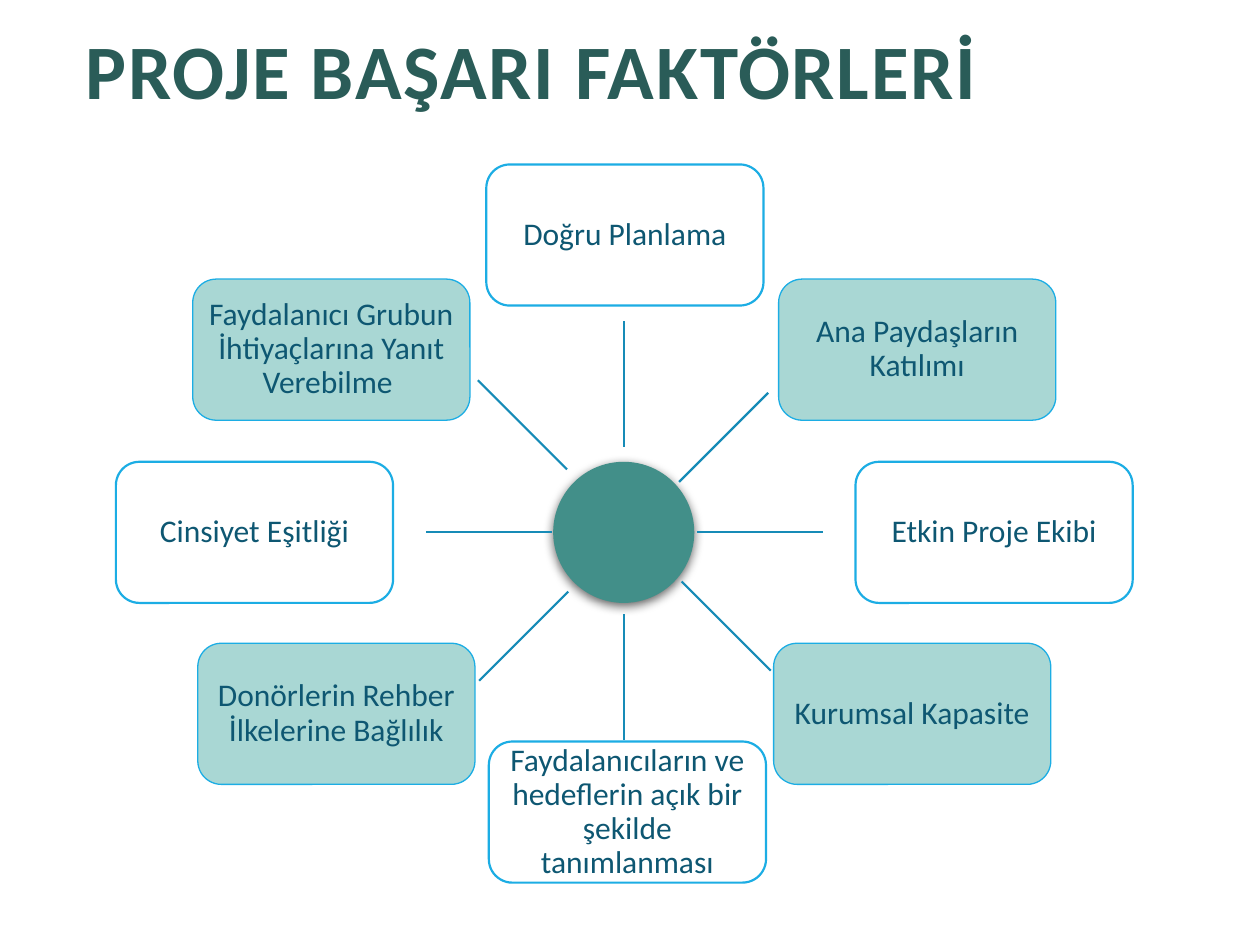
from math import cos, pi, sin

from lxml import etree
from pptx import Presentation
from pptx.dml.color import RGBColor
from pptx.enum.shapes import MSO_CONNECTOR, MSO_SHAPE
from pptx.enum.text import MSO_ANCHOR, PP_ALIGN
from pptx.oxml import parse_xml
from pptx.oxml.ns import qn
from pptx.util import Inches, Pt

MID, CENTER, LEFT = MSO_ANCHOR.MIDDLE, PP_ALIGN.CENTER, PP_ALIGN.LEFT
ROUND, OVAL = MSO_SHAPE.ROUNDED_RECTANGLE, MSO_SHAPE.OVAL
LINE = MSO_CONNECTOR.STRAIGHT

COLS, ROWS = 100, 75
FONT = "Calibri"
INK = {"title": "2A5C58", "text": "0E5772", "edge": "1CADE4", "spoke": "168BB7",
       "hub": "428F89", "mint": "A9D7D4", "white": "FFFFFF"}
HEAD = (5.8, 1.6, 87.9, 9.1)
WHEEL = (9.2, 13.2, 80.6, 58.1)
CARD = (22, 11.2)
HUB, REACH = 11.2, 10
SHADE = ('<a:effectLst xmlns:a="http://schemas.openxmlformats.org/drawingml/2006/main">'
         '<a:outerShdw blurRad="76200" dist="25400" dir="5400000" rotWithShape="0">'
         '<a:srgbClr val="000000"><a:alpha val="60000"/></a:srgbClr>'
         '</a:outerShdw></a:effectLst>')

# Each factor: text, card centre and spoke start, both as offsets from the hub.
FACTORS = [
    ("Etkin Proje Ekibi", (29.4, 0), (5.8, 0)),
    ("Kurumsal Kapasite", (22.9, 14.4), (4.6, 3.9)),
    ("Faydalanıcıların ve hedeflerin açık bir şekilde tanımlanması",
     (0.3, 22.2), (0, 6.5)),
    ("Donörlerin Rehber İlkelerine Bağlılık", (-22.8, 14.4), (-4.4, 4.7)),
    ("Cinsiyet Eşitliği", (-29.3, 0), (-5.7, 0)),
    ("Faydalanıcı Grubun İhtiyaçlarına Yanıt Verebilme ",
     (-23.2, -14.5), (-4.5, -5)),
    ("Doğru Planlama", (0.1, -23.6), (0, -6.8)),
    ("Ana Paydaşların Katılımı", (23.3, -14.5), (4.4, -4)),
]


def hue(name):
    """Return the named colour."""
    return RGBColor.from_string(INK[name])


def place(deck, *grid):
    """Turn column and row pairs into slide lengths."""
    unit = deck.slide_width / COLS, deck.slide_height / ROWS
    return [round(val * unit[i % 2]) for i, val in enumerate(grid)]


def write(shape, text, size, color, align, lead, pad):
    """Fill a shape with one styled run and return the run."""
    frame = shape.text_frame
    frame.word_wrap = True
    frame.vertical_anchor = MID
    frame.margin_left = frame.margin_right = Inches(pad)
    frame.margin_top = frame.margin_bottom = Inches(0.07)
    para = frame.paragraphs[0]
    para.alignment, para.line_spacing = align, lead
    run = para.add_run()
    run.text = text
    run.font.name, run.font.size = FONT, Pt(size)
    run.font.color.rgb = hue(color)
    return run


def head(deck, slide, box):
    """Write the title in its box."""
    shape = slide.shapes.add_textbox(*place(deck, *box))
    run = write(shape, "PROJE BAŞARI FAKTÖRLERİ", 44, "title", LEFT, 0.8, 0.1)
    run.font.bold = True
    run.font._element.set("spc", "100")


def block(deck, slide, kind, mid, size, fill):
    """Draw a filled shape around a centre point."""
    x, y = mid[0] - size[0] / 2, mid[1] - size[1] / 2
    shape = slide.shapes.add_shape(kind, *place(deck, x, y, *size))
    shape.shadow.inherit = False
    shape.fill.solid()
    shape.fill.fore_color.rgb = hue(fill)
    return shape


def card(deck, slide, mid, text, fill, width):
    """Draw one factor card."""
    shape = block(deck, slide, ROUND, mid, CARD, fill)
    shape.line.color.rgb, shape.line.width = hue("edge"), Pt(width)
    write(shape, text, 18, "text", CENTER, 0.9, 0.07)


def spoke(deck, slide, start, angle):
    """Draw one spoke outward from its start."""
    end = start[0] + REACH * cos(angle), start[1] + REACH * sin(angle)
    line = slide.shapes.add_connector(LINE, *place(deck, *start, *end))
    line.line.color.rgb, line.line.width = hue("spoke"), Pt(1.25)
    etree.SubElement(line._element.spPr, qn("a:effectLst"))


def hub(deck, slide, mid):
    """Draw the shaded hub."""
    shape = block(deck, slide, OVAL, mid, (HUB, HUB), "hub")
    shape.line.fill.background()
    old = shape._element.spPr.find(qn("a:effectLst"))
    old.getparent().replace(old, parse_xml(SHADE))


def wheel(deck, slide, box):
    """Draw hub, spokes and cards about the middle of the box."""
    x, y, wide, high = box
    mid = x + wide / 2, y + high / 2
    hub(deck, slide, mid)
    for i, (text, spot, start) in enumerate(FACTORS):
        fill, width = ("mint", 0.75) if i % 2 else ("white", 1.25)
        spoke(deck, slide, (mid[0] + start[0], mid[1] + start[1]), i * pi / 4)
        card(deck, slide, (mid[0] + spot[0], mid[1] + spot[1]), text, fill, width)


def main():
    """Build and save the slide."""
    deck = Presentation()
    deck.slide_width, deck.slide_height = Inches(10), Inches(7.5)
    slide = deck.slides.add_slide(deck.slide_layouts[6])
    head(deck, slide, HEAD)
    wheel(deck, slide, WHEEL)
    deck.save("out.pptx")


if __name__ == "__main__":
    main()
